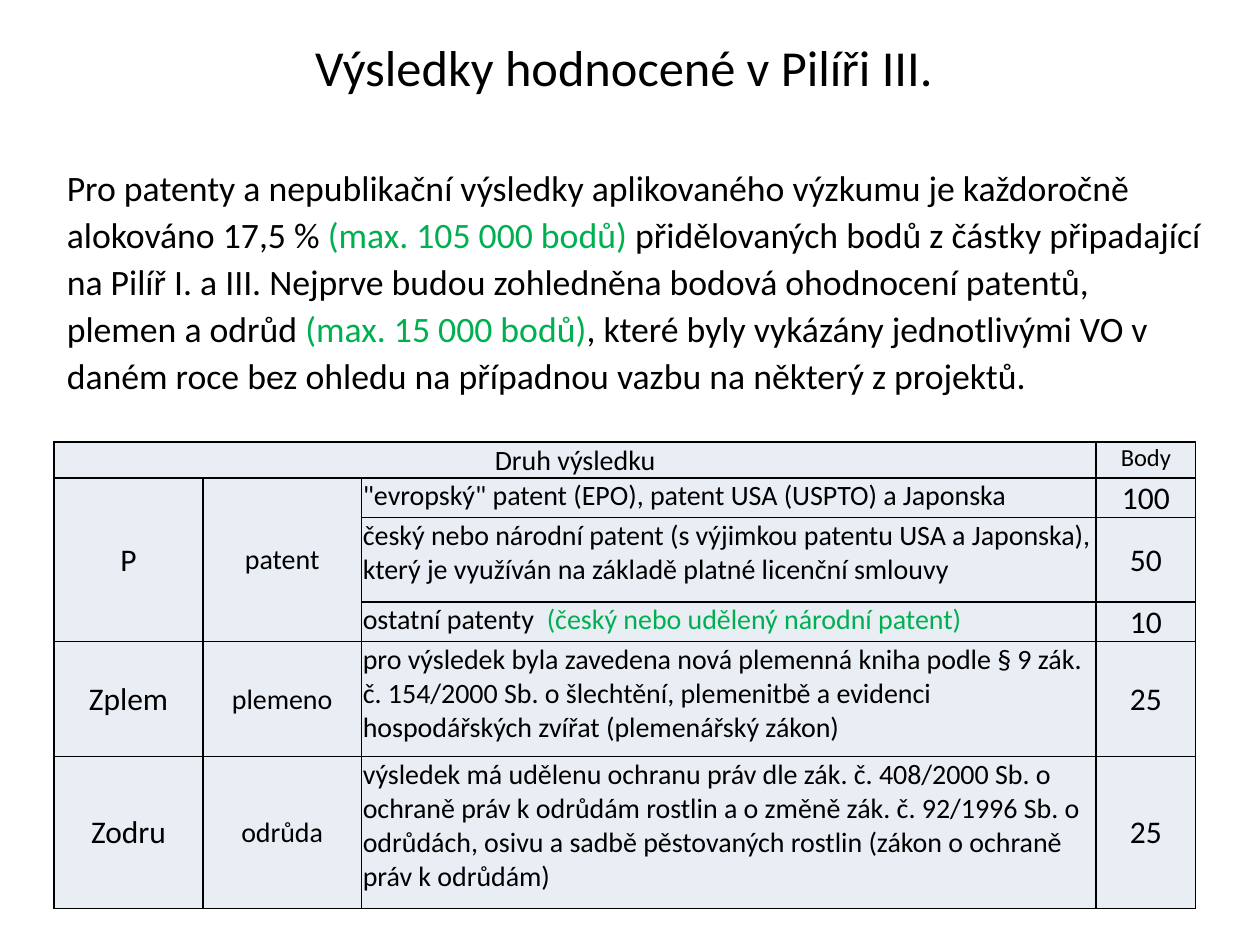
from dataclasses import dataclass

from lxml.etree import SubElement
from pptx import Presentation
from pptx.dml.color import RGBColor
from pptx.enum.text import MSO_ANCHOR, MSO_AUTO_SIZE, PP_ALIGN
from pptx.oxml.ns import qn
from pptx.util import Inches, Pt

BLACK, GREEN, CELL_FILL = "000000", "00B050", "E9EDF4"


@dataclass
class Span:
    text: str
    color: str = BLACK


@dataclass
class CellText:
    row: int
    column: int
    spans: list[Span]
    size: float = 16
    centered: bool = True
    anchor: MSO_ANCHOR = MSO_ANCHOR.MIDDLE
    rows: int = 1
    columns: int = 1


@dataclass
class Result:
    description: list[Span]
    points: str
    code: str = ""
    kind: str = ""
    rows: int = 1


def paint(target, color: str) -> None:
    """Apply a hex colour to a font's or fill's colour."""
    target.rgb = RGBColor.from_string(color)


def set_values(target, values: dict) -> None:
    for name, value in values.items():
        setattr(target, name, value)


def write(para, spans: list[Span], size: float) -> None:
    for span in spans:
        run = para.add_run()
        run.text = span.text
        set_values(run.font, {"name": "Calibri", "size": Pt(size)})
        paint(run.font.color, span.color)


def fill_placeholder(box, frame: tuple, spans: list[Span], size: float,
                     anchor: MSO_ANCHOR, para_format: dict) -> None:
    sides = ("left", "top", "width", "height")
    set_values(box, dict(zip(sides, map(Inches, frame))))
    set_values(box.text_frame, {"word_wrap": True, "vertical_anchor": anchor,
                                "auto_size": MSO_AUTO_SIZE.NONE})
    para = box.text_frame.paragraphs[0]
    set_values(para, para_format)
    write(para, spans, size)


def style_cell(cell) -> None:
    """Give a cell thin black borders, narrow margins and a plain fill."""
    properties = cell._tc.get_or_add_tcPr()
    for side in ("a:lnL", "a:lnR", "a:lnT", "a:lnB"):
        line = SubElement(properties, qn(side), w=str(Pt(1)))
        SubElement(SubElement(line, qn("a:solidFill")), qn("a:srgbClr"), val=BLACK)
    cell.fill.solid()
    paint(cell.fill.fore_color, CELL_FILL)
    margin = Inches(0.01)
    set_values(cell, {"margin_left": margin, "margin_right": margin,
                      "margin_top": margin, "margin_bottom": 0})


def write_cell(table, item: CellText) -> None:
    cell = table.cell(item.row, item.column)
    if item.rows > 1 or item.columns > 1:
        cell.merge(table.cell(item.row + item.rows - 1,
                              item.column + item.columns - 1))
    cell.vertical_anchor = item.anchor
    para = cell.text_frame.paragraphs[0]
    para.alignment = PP_ALIGN.CENTER if item.centered else PP_ALIGN.LEFT
    write(para, item.spans, item.size)


def add_results_table(page, results: list[Result]) -> None:
    widths = (1.18, 1.26, 5.83, 0.79)
    heights = (0.28, 0.31, 0.67, 0.31, 0.91, 1.21)
    table = page.shapes.add_table(
        len(heights), len(widths), Inches(0.43), Inches(3.51),
        Inches(sum(widths)), Inches(sum(heights))).table
    for column, width in zip(table.columns, widths):
        column.width = Inches(width)
    for row, height in zip(table.rows, heights):
        row.height = Inches(height)
    for cell in table.iter_cells():
        style_cell(cell)

    # Header row
    top = MSO_ANCHOR.TOP
    write_cell(table, CellText(0, 0, [Span("Druh výsledku")], anchor=top, columns=3))
    write_cell(table, CellText(0, 3, [Span("Body")], 14, anchor=top))

    # One row per result; the code and kind may cover several rows
    for row, result in enumerate(results, start=1):
        if result.code:
            write_cell(table, CellText(row, 0, [Span(result.code)], 18, rows=result.rows))
            write_cell(table, CellText(row, 1, [Span(result.kind)], rows=result.rows))
        write_cell(table, CellText(row, 2, result.description, centered=False, anchor=top))
        write_cell(table, CellText(row, 3, [Span(result.points)], 18))


INTRO = [
    Span("Pro patenty a nepublikační výsledky aplikovaného výzkumu je každoročně "
         "alokováno 17,5 % "),
    Span("(max. 105 000 bodů) ", GREEN),
    Span("přidělovaných bodů z částky připadající na Pilíř I. a III. Nejprve budou "
         "zohledněna bodová ohodnocení patentů, plemen a odrůd "),
    Span("(max. 15 000 bodů)", GREEN),
    Span(", které byly vykázány jednotlivými VO v daném roce bez ohledu na případnou "
         "vazbu na některý z projektů."),
]

RESULTS = [
    Result([Span('"evropský" patent (EPO), patent USA (USPTO) a Japonska')],
           "100", "P", "patent", rows=3),
    Result([Span("český nebo národní patent (s výjimkou patentu USA a Japonska), "
                 "který je využíván na základě platné licenční smlouvy")], "50"),
    Result([Span("ostatní patenty  "),
            Span("(český nebo udělený národní patent)", GREEN)], "10"),
    Result([Span("pro výsledek byla zavedena nová plemenná kniha podle § 9 zák. "
                 "č. 154/2000 Sb. o šlechtění, plemenitbě a evidenci hospodářských "
                 "zvířat (plemenářský zákon)")], "25", "Zplem", "plemeno"),
    Result([Span("výsledek má udělenu ochranu práv dle zák. č. 408/2000 Sb. o ochraně "
                 "práv k odrůdám rostlin a o změně zák. č. 92/1996 Sb. o odrůdách, "
                 "osivu a sadbě pěstovaných rostlin (zákon o ochraně práv k "
                 "odrůdám)")], "25", "Zodru", "odrůda"),
]


def main() -> None:
    deck = Presentation()
    set_values(deck, {"slide_width": Inches(10), "slide_height": Inches(7.5)})
    page = deck.slides.add_slide(deck.slide_layouts[1])

    # Title
    fill_placeholder(page.shapes.title, (0.5, 0.21, 9, 0.63),
                     [Span("Výsledky hodnocené v Pilíři III. ")], 28.8,
                     MSO_ANCHOR.MIDDLE, {"alignment": PP_ALIGN.CENTER})

    # Introductory paragraph, without a bullet
    body = page.placeholders[1]
    fill_placeholder(body, (0.43, 1.23, 9.22, 2.13), INTRO, 20.4, MSO_ANCHOR.TOP,
                     {"line_spacing": 1.1, "space_before": Pt(4)})
    properties = body.text_frame.paragraphs[0]._p.get_or_add_pPr()
    set_values(properties, {"marL": 0, "indent": 0} if hasattr(properties, "marL") else {})
    for name in ("marL", "indent"):
        properties.set(name, "0")
    SubElement(properties, qn("a:buNone"))

    add_results_table(page, RESULTS)
    deck.save("out.pptx")


if __name__ == "__main__":
    main()
